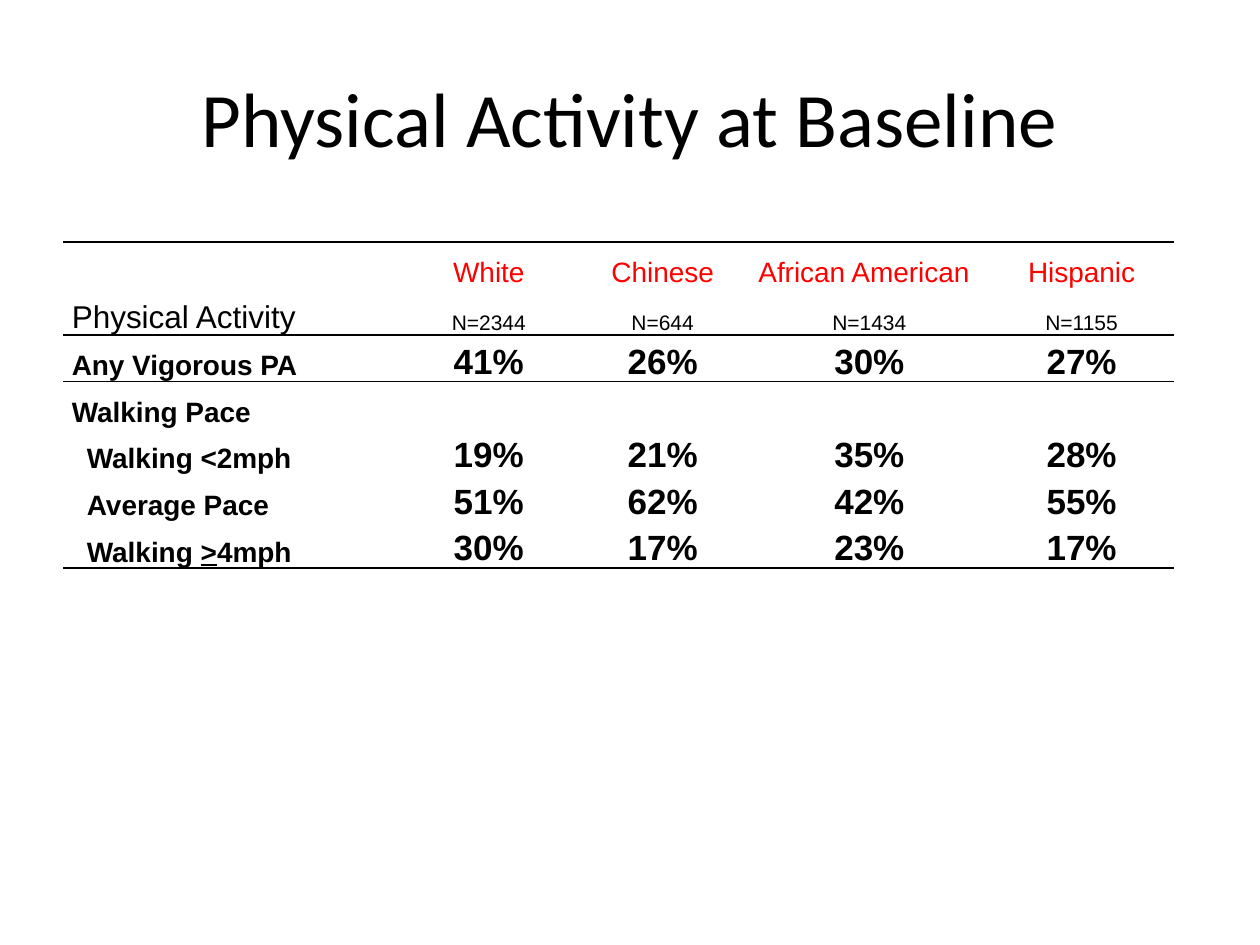
from lxml import etree
from pptx import Presentation
from pptx.dml.color import RGBColor
from pptx.enum.text import MSO_ANCHOR, PP_ALIGN
from pptx.oxml.ns import qn
from pptx.util import Inches, Pt

LEFT, CENTER = PP_ALIGN.LEFT, PP_ALIGN.CENTER
BOTTOM, MIDDLE = MSO_ANCHOR.BOTTOM, MSO_ANCHOR.MIDDLE
TITLE_ONLY = 5
PLAIN_TABLE = "{2D5ABB26-0587-4C30-8999-92F81FD0307C}"
COLORS = {"text": "000000", "group": "FF0000", "rule": "000000"}

COLUMN_WIDTHS = [2.69, 1.38, 1.38, 1.9, 1.47]
ROW_HEIGHT = 0.37
MARGIN, INDENT = 0.07, 0.12
ROWS = [
    ["", "White", "Chinese", "African American", "Hispanic"],
    ["Physical Activity", "N=2344", "N=644", "N=1434", "N=1155"],
    ["Any Vigorous PA", "41%", "26%", "30%", "27%"],
    ["Walking Pace", "", "", "", ""],
    ["Walking <2mph", "19%", "21%", "35%", "28%"],
    ["Average Pace", "51%", "62%", "42%", "55%"],
    ["Walking >4mph", "30%", "17%", "23%", "17%"],
]
UNDERLINED = ">"
INDENTED_ROWS = (4, 5, 6)
# Ruled edges of each row: the header and body share the middle rule
RULES = {0: ["lnT"], 1: ["lnB"], 2: ["lnT"], 6: ["lnB"]}


def cell_format(row, column):
    """Return the font format of a table cell."""
    if row == 0:
        return {"size": Pt(16), "bold": False, "color": "group"}
    if row == 1:
        return {"size": Pt(12 if column else 18), "bold": False, "color": "text"}
    return {"size": Pt(20 if column else 16), "bold": True, "color": "text"}


class SlideBuilder:
    def __init__(self, presentation):
        self.slide = presentation.slides.add_slide(presentation.slide_layouts[TITLE_ONLY])
        self.title_font, self.table_font = "Calibri", "Arial"

    def format_font(self, font, values):
        for name, value in values.items():
            if name == "color":
                font.color.rgb = RGBColor.from_string(COLORS[value])
            else:
                setattr(font, name, value)

    def title(self, text, left, top, width, height):
        shape = self.slide.shapes.title
        shape.left, shape.top = Inches(left), Inches(top)
        shape.width, shape.height = Inches(width), Inches(height)
        shape.text_frame.vertical_anchor = MIDDLE
        paragraph = shape.text_frame.paragraphs[0]
        paragraph.alignment = CENTER
        run = paragraph.add_run()
        run.text = text
        self.format_font(run.font, {"name": self.title_font, "size": Pt(44), "color": "text"})

    def rule(self, cell, edge):
        properties = cell._tc.get_or_add_tcPr()
        line = etree.SubElement(properties, qn(f"a:{edge}"), w=str(Pt(1)))
        fill = etree.SubElement(line, qn("a:solidFill"))
        etree.SubElement(fill, qn("a:srgbClr"), val=COLORS["rule"])

    def cell_text(self, cell, text, alignment, values):
        paragraph = cell.text_frame.paragraphs[0]
        paragraph.alignment = alignment
        paragraph.line_spacing = 1.15
        before, mark, after = text.partition(UNDERLINED)
        for piece in filter(None, (before, mark, after)):
            run = paragraph.add_run()
            run.text = piece
            self.format_font(run.font, {"name": self.table_font, **values})
            if piece == UNDERLINED:
                run.font.underline = True

    def table(self, rows, left, top):
        frame = self.slide.shapes.add_table(
            len(rows), len(COLUMN_WIDTHS), Inches(left), Inches(top),
            Inches(sum(COLUMN_WIDTHS)), Inches(ROW_HEIGHT * len(rows)))
        table = frame.table
        table.first_row = table.horz_banding = False
        table._tbl.tblPr.find(qn("a:tableStyleId")).text = PLAIN_TABLE
        for column, width in zip(table.columns, COLUMN_WIDTHS):
            column.width = Inches(width)
        for row_index, texts in enumerate(rows):
            table.rows[row_index].height = Inches(ROW_HEIGHT)
            for column_index, text in enumerate(texts):
                cell = table.cell(row_index, column_index)
                is_label = column_index == 0
                indent = INDENT if is_label and row_index in INDENTED_ROWS else 0
                cell.margin_left, cell.margin_right = Inches(MARGIN + indent), Inches(MARGIN)
                cell.margin_top = cell.margin_bottom = 0
                cell.vertical_anchor = BOTTOM
                for edge in RULES.get(row_index, []):
                    self.rule(cell, edge)
                cell.fill.background()
                # The longest group name fills its column from the left
                alignment = LEFT if is_label or text == "African American" else CENTER
                self.cell_text(cell, text, alignment, cell_format(row_index, column_index))


def main():
    presentation = Presentation()
    presentation.slide_width, presentation.slide_height = Inches(10), Inches(7.5)
    builder = SlideBuilder(presentation)
    builder.title("Physical Activity at Baseline", 0.5, 0.3, 9, 1.25)
    builder.table(ROWS, 0.5, 1.92)
    presentation.save("out.pptx")


if __name__ == "__main__":
    main()
